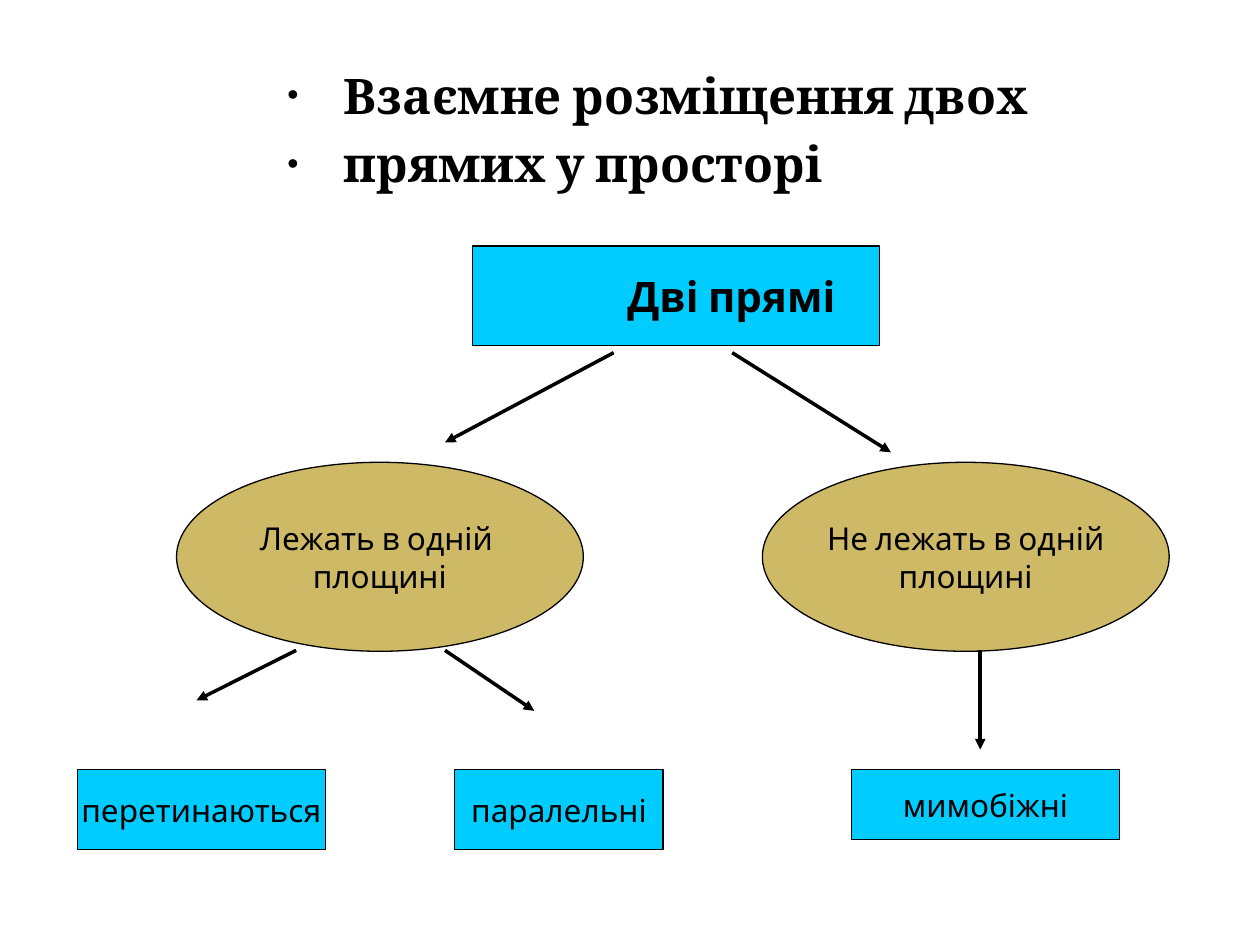
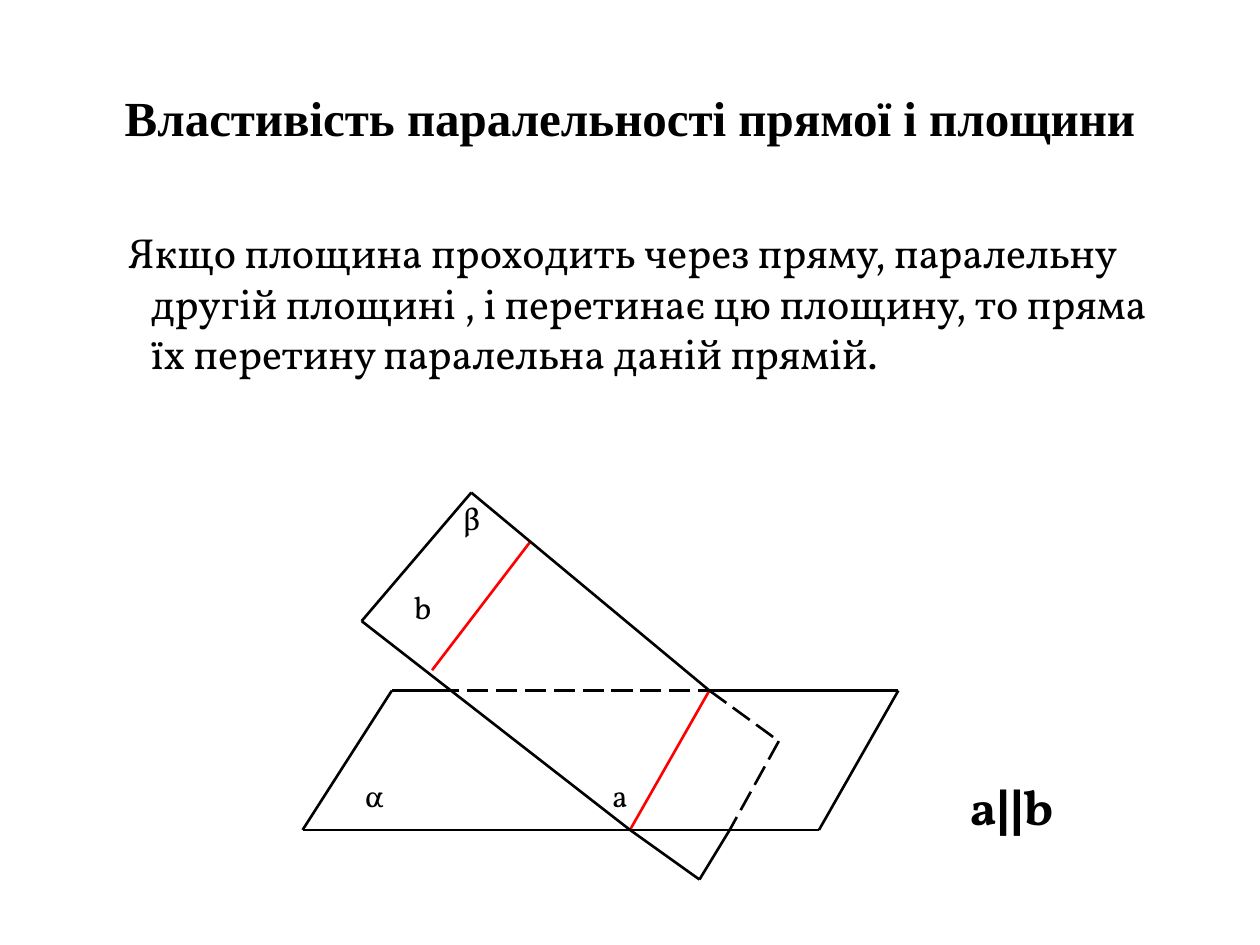
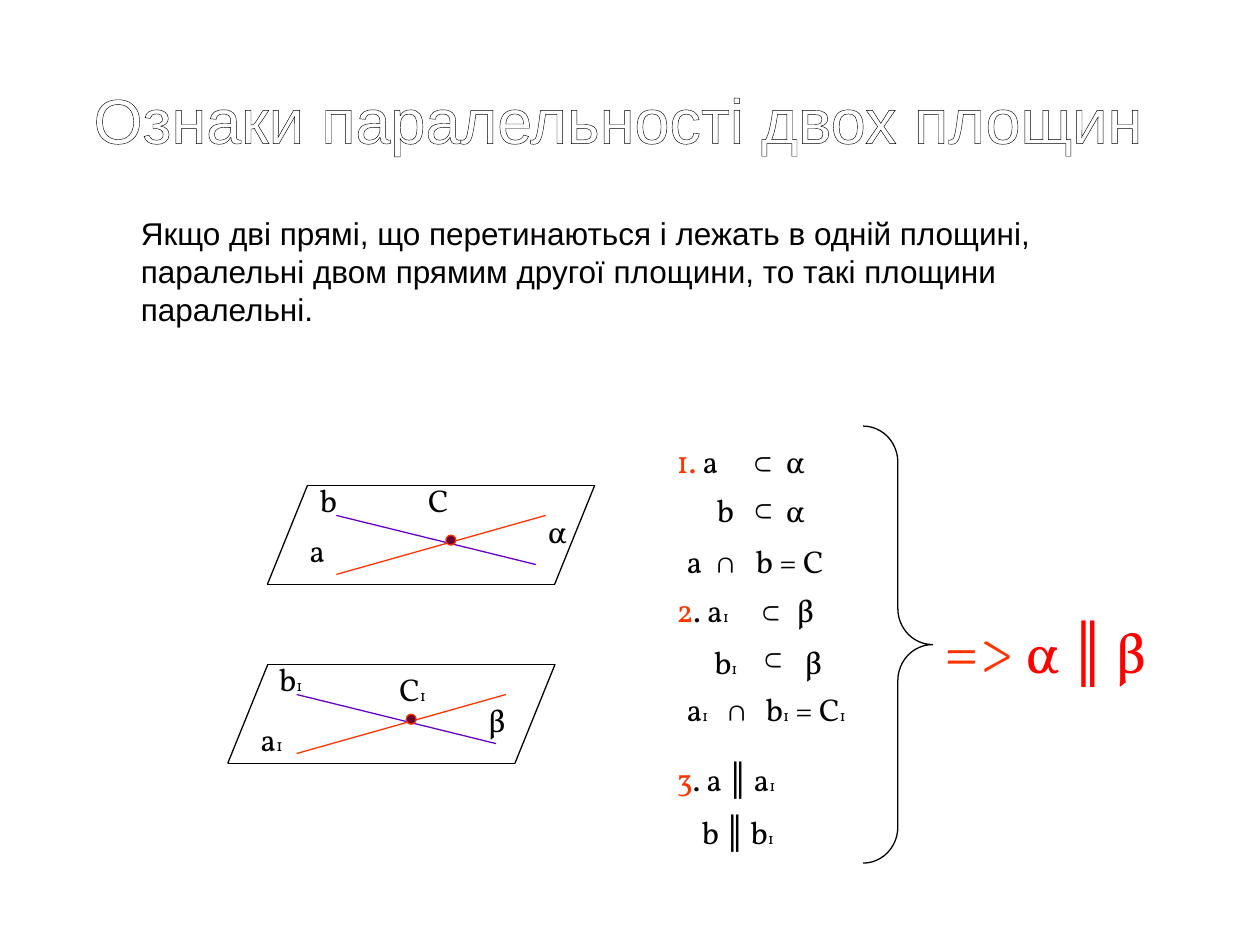
"""Build three geometry slides about parallel lines and planes."""
from lxml import etree
from pptx import Presentation
from pptx import util as u
from pptx.dml.color import RGBColor
from pptx.enum import dml, shapes, text
from pptx.oxml.ns import qn

COLORS = {
    "background": "FFFFFF", "ink": "000000", "box": "00CCFF", "oval": "CEB966",
    "red": "FF0000", "orange": "FF3300", "violet": "6600CC", "dot": "660033",
}
ORANGE = {"color": "orange"}
SUB = ("1", {"size": 9})
LABEL_HEIGHT = 1.02


def write(shape, *paragraphs, font="Vollkorn", size=18, color="ink", bold=False,
          align=text.PP_ALIGN.LEFT, anchor=text.MSO_ANCHOR.TOP, wrap=True, space=0):
    """Fill a shape with paragraphs, each a string or a list of (text, overrides) runs."""
    frame = shape.text_frame
    frame.auto_size = text.MSO_AUTO_SIZE.NONE
    frame.word_wrap = wrap
    frame.vertical_anchor = anchor
    for index, content in enumerate(paragraphs):
        paragraph = frame.add_paragraph() if index else frame.paragraphs[0]
        paragraph.alignment = align
        if index and space:
            paragraph.space_before = u.Pt(space)
        runs = [(content, {})] if isinstance(content, str) else content
        for words, changes in runs:
            style = {"font": font, "size": size, "color": color, **changes}
            run = paragraph.add_run()
            run.text = words
            run.font.name = style["font"]
            run.font.size = u.Pt(style["size"])
            run.font.bold = bold
            run.font.color.rgb = RGBColor.from_string(COLORS[style["color"]])


def draw_line(slide, start, end, color="ink", width=0.75, dashed=False, arrow=False):
    """Draw a straight line between two points in centimetres."""
    line = slide.shapes.add_connector(
        shapes.MSO_CONNECTOR.STRAIGHT, *map(u.Cm, (*start, *end)))
    line.line.color.rgb = RGBColor.from_string(COLORS[color])
    line.line.width = u.Pt(width)
    if dashed:
        line.line.dash_style = dml.MSO_LINE.LONG_DASH
    properties = line._element.spPr
    if arrow:
        etree.SubElement(properties.find(qn("a:ln")), qn("a:tailEnd"), type="triangle")
    etree.SubElement(properties, qn("a:effectLst"))


presentation = Presentation()
presentation.slide_width, presentation.slide_height = u.Cm(25.4), u.Cm(19.05)
background = presentation.slide_master.background.fill
background.solid()
background.fore_color.rgb = RGBColor.from_string(COLORS["background"])

CENTER, MIDDLE = text.PP_ALIGN.CENTER, text.MSO_ANCHOR.MIDDLE
titles = [
    ((5.16, 1.19, 17.78, 4.88), ["Взаємне розміщення двох", "прямих у просторі"],
     {"font": "Cambria", "size": 28, "bold": True, "space": 5.6}),
    ((1.27, 0.76, 22.86, 3.18), ["Властивість паралельності прямої і площини"],
     {"font": "Times New Roman", "size": 28, "bold": True, "align": CENTER, "anchor": MIDDLE}),
    ((1.57, 1.5, 21.79, 1.4), ["Ознаки паралельності двох площин"],
     {"font": "Arial", "size": 36, "color": "background", "align": CENTER, "wrap": False}),
]
for box, lines, style in titles:
    slide = presentation.slides.add_slide(presentation.slide_layouts[5])
    title = slide.shapes.title
    title.left, title.top, title.width, title.height = map(u.Cm, box)
    write(title, *lines, **style)
scheme, property_slide, criterion = presentation.slides

for paragraph in scheme.shapes.title.text_frame.paragraphs:
    properties = paragraph._p.get_or_add_pPr()
    properties.set("marL", str(u.Cm(1.52)))
    properties.set("indent", str(u.Cm(-1.14)))
    bullet_color = etree.SubElement(properties, qn("a:buClr"))
    etree.SubElement(bullet_color, qn("a:srgbClr"), val=COLORS["ink"])
    etree.SubElement(properties, qn("a:buSzPct"), val="65000")
    etree.SubElement(properties, qn("a:buFont"), typeface="Arial")
    etree.SubElement(properties, qn("a:buChar"), char="•")

RECTANGLE, OVAL = shapes.MSO_SHAPE.RECTANGLE, shapes.MSO_SHAPE.OVAL
nodes = [
    (RECTANGLE, "box", (9.53, 4.96, 8.2, 2), ["Дві прямі"], {"size": 24, "bold": True}),
    (OVAL, "oval", (3.56, 9.32, 8.2, 3.81), ["Лежать в одній ", "площині"], {}),
    (OVAL, "oval", (15.37, 9.32, 8.2, 3.81), ["Не лежать в одній", "площині"], {}),
    (RECTANGLE, "box", (1.56, 15.52, 5, 1.6), ["перетинаються"], {}),
    (RECTANGLE, "box", (9.17, 15.52, 4.2, 1.6), ["паралельні"], {}),
    (RECTANGLE, "box", (17.17, 15.52, 5.4, 1.4), ["мимобіжні"], {}),
]
for kind, fill, box, lines, style in nodes:
    node = scheme.shapes.add_shape(kind, *map(u.Cm, box))
    node.shadow.inherit = False
    node.fill.solid()
    node.fill.fore_color.rgb = RGBColor.from_string(COLORS[fill])
    node.line.color.rgb = RGBColor.from_string(COLORS["ink"])
    node.line.width = u.Pt(0.75)
    write(node, *lines, font="Cabin", align=CENTER, anchor=MIDDLE, wrap=False, **style)
    if lines == ["Дві прямі"]:
        node.text_frame.margin_left = u.Cm(2.48)

arrows = [
    ((12.37, 7.11), (8.97, 8.92)), ((14.76, 7.11), (17.96, 9.12)),
    ((5.97, 13.11), (3.96, 14.12)), ((8.97, 13.11), (10.77, 14.33)),
    ((19.76, 13.11), (19.76, 15.11)),
]
for start, end in arrows:
    draw_line(scheme, start, end, width=2, arrow=True)

theorem = property_slide.shapes.add_textbox(*map(u.Cm, (1.27, 4.45, 22.86, 5.16)))
write(theorem, "Якщо площина проходить через пряму, паралельну другій площині , "
      "і перетинає цю площину, то пряма їх перетину паралельна даній прямій.", size=24)
properties = theorem.text_frame.paragraphs[0]._p.get_or_add_pPr()
properties.set("marL", str(u.Cm(1.52)))
properties.set("indent", str(u.Cm(-0.46)))

beta_top, beta_left = (9.5, 9.93), (7.29, 12.52)
beta_right, beta_bottom = (15.7, 14.94), (14.1, 17.73)
alpha_top_left, alpha_top_right = (7.9, 13.92), (18.11, 13.92)
alpha_bottom_left, alpha_bottom_right = (6.1, 16.73), (16.51, 16.73)
a_top, a_bottom = (14.3, 13.92), (12.7, 16.73)
b_top, b_bottom = (10.69, 10.92), (8.71, 13.51)
hidden_start, hidden_end = (9.09, 13.92), (14.71, 16.73)
dash_start = (14.5, 13.92)
edges = [
    (a_top, a_bottom, "red", False), (b_top, b_bottom, "red", False),
    (beta_top, beta_left, "ink", False), (beta_left, a_bottom, "ink", False),
    (beta_top, a_top, "ink", False), (a_bottom, beta_bottom, "ink", False),
    (hidden_end, beta_bottom, "ink", False), (a_top, beta_right, "ink", True),
    (beta_right, hidden_end, "ink", True), (dash_start, hidden_start, "ink", True),
    (alpha_top_left, hidden_start, "ink", False), (a_top, alpha_top_right, "ink", False),
    (alpha_top_left, alpha_bottom_left, "ink", False),
    (alpha_bottom_left, alpha_bottom_right, "ink", False),
    (alpha_top_right, alpha_bottom_right, "ink", False),
]
for start, end, color, dashed in edges:
    draw_line(property_slide, start, end, color, 1.5, dashed)

for left, top, width, letter in [
        (7.11, 15.52, 1.8, "α"), (9.09, 9.93, 1.65, "β"),
        (8.1, 11.73, 1.4, "b"), (12.09, 15.52, 0.81, "a")]:
    label = property_slide.shapes.add_textbox(*map(u.Cm, (left, top, width, LABEL_HEIGHT)))
    write(label, letter)
conclusion = property_slide.shapes.add_textbox(*map(u.Cm, (19.3, 15.52, 5, 1.45)))
write(conclusion, [("a", {}), ("||", {"font": "Arial"}), ("b", {})], size=28, bold=True)

title_run = criterion.shapes.title.text_frame.paragraphs[0].runs[0]
outline = etree.Element(qn("a:ln"), w=str(u.Pt(0.75)))
outline_fill = etree.SubElement(outline, qn("a:solidFill"))
etree.SubElement(outline_fill, qn("a:srgbClr"), val=COLORS["ink"])
title_run._r.get_or_add_rPr().insert(0, outline)

statement = criterion.shapes.add_textbox(*map(u.Cm, (2.59, 4.19, 19.81, 1.78)))
write(statement, "Якщо дві прямі, що перетинаються і лежать в одній площині, паралельні "
      "двом прямим другої площини, то такі площини паралельні.", font="Arial")

corners = [(6.2, 9.78), (11.99, 9.78), (11.18, 11.78), (5.39, 11.78)]
plane_lines = [(start, end, "ink") for start, end in zip(corners, corners[1:] + corners[:1])]
plane_lines += [((11, 10.39), (6.78, 11.58), "orange"), ((6.78, 10.39), (10.8, 11.38), "violet")]
for shift_x, shift_y in [(0, 0), (-0.8, 3.61)]:
    for (x1, y1), (x2, y2), color in plane_lines:
        draw_line(criterion, (x1 + shift_x, y1 + shift_y), (x2 + shift_x, y2 + shift_y), color)
    dot = criterion.shapes.add_shape(
        OVAL, *map(u.Cm, (8.99 + shift_x, 10.79 + shift_y, 0.2, 0.2)))
    dot.shadow.inherit = False
    dot.fill.solid()
    dot.fill.fore_color.rgb = RGBColor.from_string(COLORS["dot"])
    dot.line.color.rgb = RGBColor.from_string(COLORS["orange"])
    dot.line.width = u.Pt(0.75)

plane_labels = [
    (5.99, 10.59, 1, "a"), (6.2, 9.58, 0.8, "b"), (10.8, 10.19, 1.2, "α"), (8.38, 9.58, 1.2, "C"),
    (5, 14.4, 1.4, [("a", {}), ("1", {"size": 10})]), (5.38, 13.18, 1.2, [("b", {}), SUB]),
    (9.6, 14, 1, "β"), (7.8, 13.39, 1.2, [("C", {}), SUB]),
]
conditions = [
    (13.39, 8.79, 1.6, [("1.", ORANGE), (" a", {})]), (15.6, 8.79, 1.4, "α"),
    (14.2, 9.78, 0.81, "b"), (15.6, 9.78, 0.91, "α"),
    (13.59, 10.8, 0.76, "a"), (14.2, 10.8, 1.07, "∩"), (14.99, 10.8, 2.21, "b = C"),
    (13.39, 11.79, 1.78, [("2", ORANGE), (". a", {}), SUB]), (15.82, 11.79, 1.55, "β"),
    (14.15, 12.83, 1.04, [("b", {}), SUB]), (15.98, 12.83, 0.97, "β"),
    (13.59, 13.79, 1.19, [("a", {}), SUB]), (14.43, 13.79, 0.97, "∩"),
    (15.19, 13.79, 2.39, [("b", {}), SUB, (" = C", {}), SUB]),
]
for left, top, width, content in plane_labels + conditions:
    label = criterion.shapes.add_textbox(*map(u.Cm, (left, top, width, LABEL_HEIGHT)))
    write(label, content)

for left, top in [(14.8, 8.79), (14.81, 9.75), (14.96, 11.79), (15.01, 12.75)]:
    subset_sign = criterion.shapes.add_textbox(*map(u.Cm, (left, top, 0.98, LABEL_HEIGHT)))
    subset_sign.rotation = 270
    write(subset_sign, "∩")

parallels = criterion.shapes.add_textbox(*map(u.Cm, (13.39, 15.19, 3.61, 2.74)))
write(parallels, [("3", ORANGE), (". a ║ а", {}), SUB], [("b ║ b", {}), SUB], space=9)
parallels.text_frame.paragraphs[1]._p.get_or_add_pPr().set("marL", str(u.Cm(0.51)))

brace = criterion.shapes.add_shape(
    shapes.MSO_SHAPE.RIGHT_BRACE, *map(u.Cm, (17.4, 8.59, 1.4, 8.81)))
brace.adjustments[0], brace.adjustments[1] = 0.52, 0.5
brace.shadow.inherit = False
brace.fill.background()
brace.line.color.rgb = RGBColor.from_string(COLORS["ink"])
brace.line.width = u.Pt(0.75)

result = criterion.shapes.add_textbox(*map(u.Cm, (18.8, 12.19, 5.69, 1.78)))
write(result, [("=> ", {"size": 36, "color": "orange"}), ("α ║ β", {})], size=32, color="red")

presentation.save("out.pptx")
